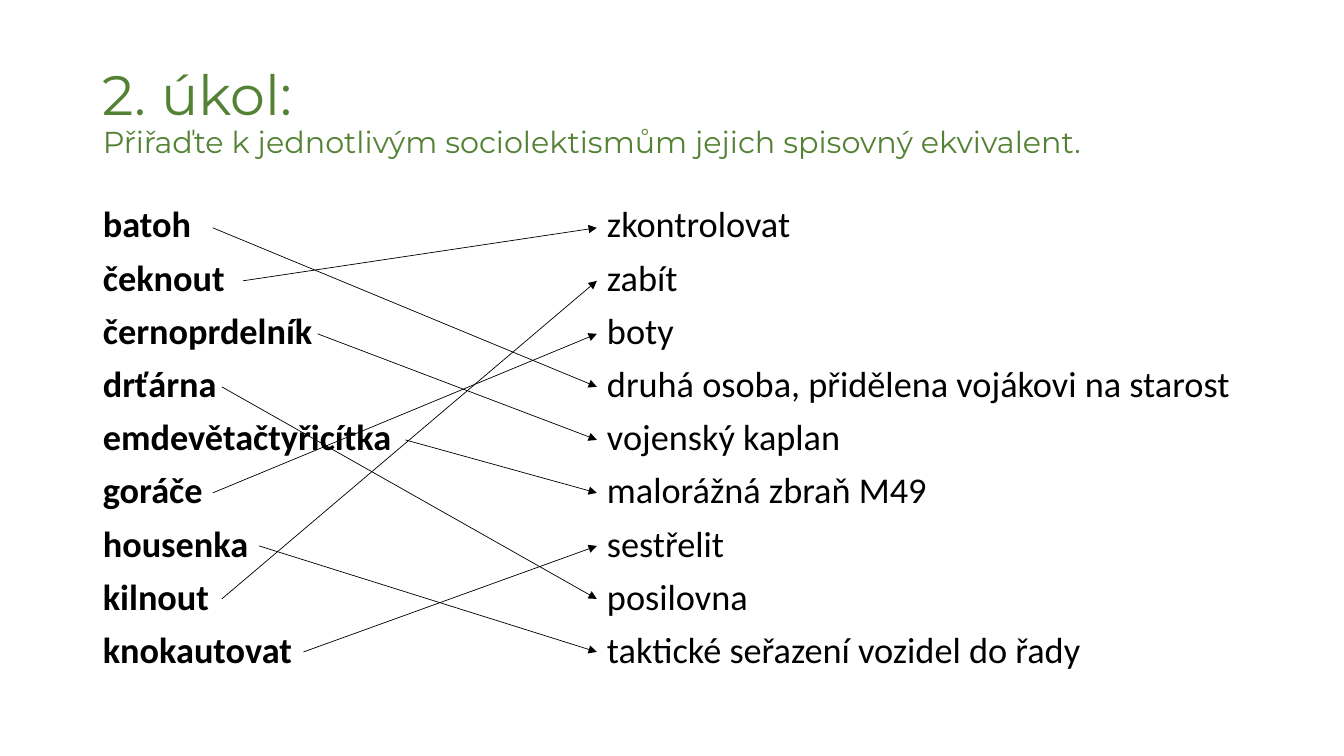
from dataclasses import dataclass

import pptx
import pptx.dml.color
import pptx.enum.shapes
import pptx.enum.text
import pptx.oxml.ns
import pptx.slide
import pptx.text.text
import pptx.util
from lxml import etree

Inches = pptx.util.Inches
Pt = pptx.util.Pt
qn = pptx.oxml.ns.qn
GREEN = pptx.dml.color.RGBColor(0x54, 0x82, 0x35)
BLACK = pptx.dml.color.RGBColor(0, 0, 0)

LEFT, WIDTH = 0.92, 11.5
TOP, STEP = 2.26, 0.526  # middle of the first row, distance between rows
TIP = 5.92  # where every arrow ends
TAB = 5.0  # second column, from the text edge


@dataclass
class Row:
    term: str
    sense: str  # text beside the term, not its answer
    start: float  # left end of the arrow
    goal: int  # row of the answer


ROWS = [
    Row("batoh", "zkontrolovat", 2.11, 3),
    Row("čeknout", "zabít", 2.41, 0),
    Row("černoprdelník", "boty", 3.15, 4),
    Row("drťárna", "druhá osoba, přidělena vojákovi na starost", 2.2, 7),
    Row("emdevětačtyřicítka", "vojenský kaplan", 4.02, 5),
    Row("goráče", "malorážná zbraň M49", 2.11, 2),
    Row("housenka", "sestřelit", 2.57, 8),
    Row("kilnout", "posilovna", 2.2, 1),
    Row("knokautovat", "taktické seřazení vozidel do řady", 3.01, 6),
]


def add_run(para: pptx.text.text._Paragraph, text: str, font: str, size: float,
            color: pptx.dml.color.RGBColor, bold: bool = False) -> None:
    run = para.add_run()
    run.text = text
    run.font.name = font
    run.font.size = Pt(size)
    run.font.color.rgb = color
    run.font.bold = bold


def set_box(shape, top: float, height: float,
            anchor: pptx.enum.text.MSO_ANCHOR) -> pptx.text.text.TextFrame:
    """Move a placeholder and return its text frame."""
    shape.left, shape.top = Inches(LEFT), Inches(top)
    shape.width, shape.height = Inches(WIDTH), Inches(height)
    frame = shape.text_frame
    frame.word_wrap = True
    frame.auto_size = pptx.enum.text.MSO_AUTO_SIZE.NONE
    frame.vertical_anchor = anchor
    return frame


def add_title(slide: pptx.slide.Slide) -> None:
    frame = set_box(slide.shapes.title, 0.4, 1.45, pptx.enum.text.MSO_ANCHOR.MIDDLE)
    para = frame.paragraphs[0]
    para.alignment = pptx.enum.text.PP_ALIGN.LEFT
    para.line_spacing = 0.9
    add_run(para, "2. úkol:", "Montserrat", 39.6, GREEN)
    para.add_line_break()
    add_run(para, "Přiřaďte k jednotlivým sociolektismům jejich spisovný ekvivalent.",
            "Montserrat", 21.6, GREEN)


def add_list(slide: pptx.slide.Slide) -> None:
    frame = set_box(slide.placeholders[1], 2, 4.76, pptx.enum.text.MSO_ANCHOR.TOP)
    for i, row in enumerate(ROWS):
        para = frame.add_paragraph() if i else frame.paragraphs[0]
        para.line_spacing = 0.9
        para.space_before = Pt(10)
        set_tab(para)
        add_run(para, row.term, "Calibri", 25.9, BLACK, True)
        add_run(para, "\t" + row.sense, "Calibri", 25.9, BLACK)


def set_tab(para: pptx.text.text._Paragraph) -> None:
    """Drop bullet and indent, and make the second column the only stop."""
    props = para._p.get_or_add_pPr()
    props.set("marL", "0")
    props.set("indent", "0")
    props.set("defTabSz", str(Inches(TAB)))
    etree.SubElement(props, qn("a:buNone"))
    tabs = etree.SubElement(props, qn("a:tabLst"))
    etree.SubElement(tabs, qn("a:tab"), pos=str(Inches(TAB)), algn="l")


def add_arrow(slide: pptx.slide.Slide, start: float, row: int, goal: int) -> None:
    line = slide.shapes.add_connector(
        pptx.enum.shapes.MSO_CONNECTOR.STRAIGHT,
        Inches(start), Inches(TOP + row * STEP),
        Inches(TIP), Inches(TOP + goal * STEP))
    line.line.color.rgb = BLACK
    line.line.width = Pt(0.5)
    etree.SubElement(line.line._get_or_add_ln(), qn("a:tailEnd"), type="triangle")
    etree.SubElement(line._element.spPr, qn("a:effectLst"))


def main() -> None:
    deck = pptx.Presentation()
    deck.slide_width, deck.slide_height = Inches(13.33), Inches(7.5)
    slide = deck.slides.add_slide(deck.slide_layouts[1])
    add_title(slide)
    add_list(slide)
    for i, row in enumerate(ROWS):
        add_arrow(slide, row.start, i, row.goal)
    deck.save("out.pptx")


if __name__ == "__main__":
    main()
